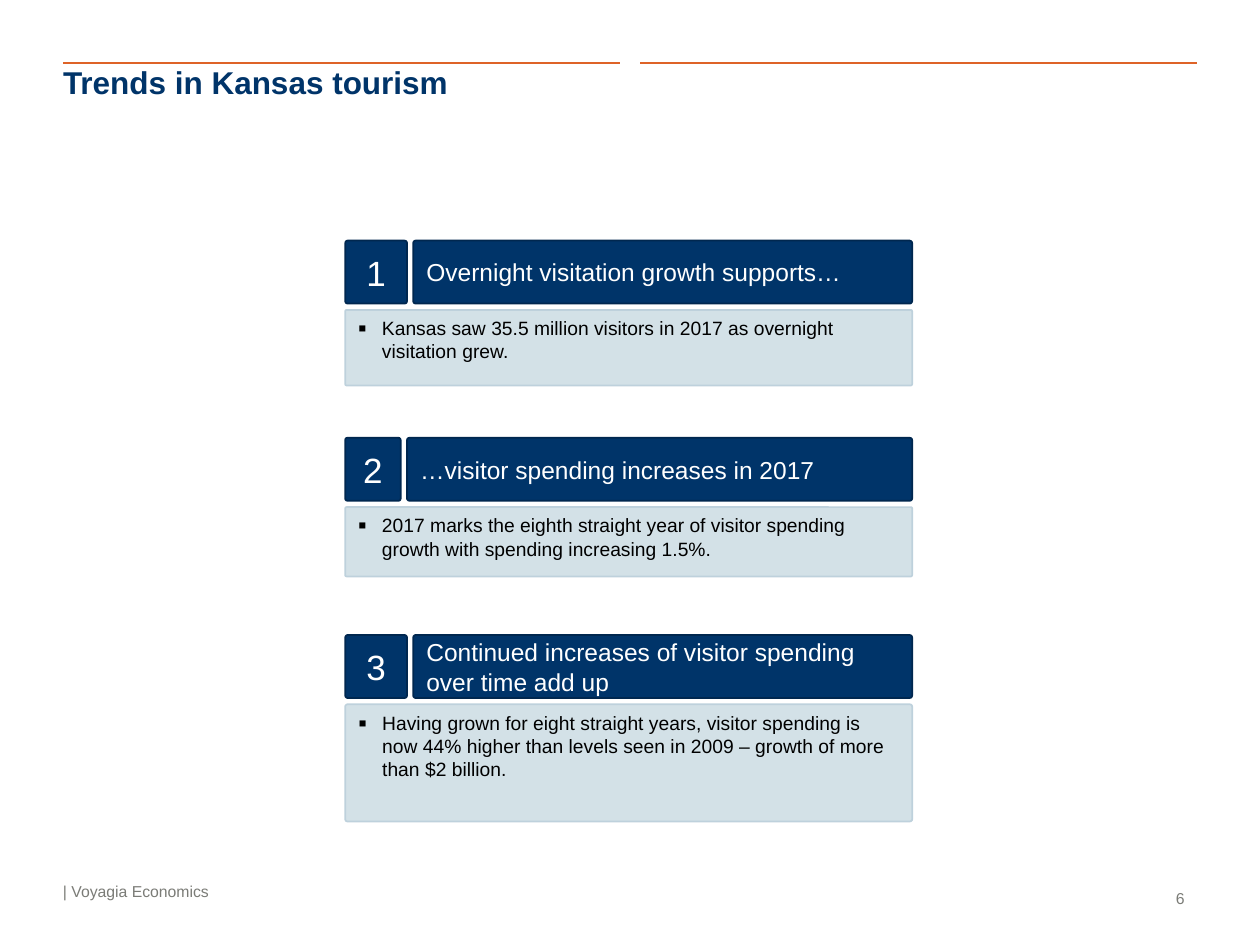
from lxml.etree import SubElement
from pptx import Presentation
from pptx.dml.color import RGBColor
from pptx.enum.shapes import MSO_CONNECTOR, MSO_SHAPE
from pptx.enum.text import MSO_ANCHOR as Anchor, PP_ALIGN as Align
from pptx.oxml.ns import qn
from pptx.util import Inches, Pt

COLORS = {
    "navy": "003469", "navy_edge": "00274F", "panel": "D3E1E7",
    "panel_edge": "BED1DC", "orange": "DE6328", "gray": "7B7C77",
    "white": "FFFFFF", "black": "000000",
}
COLORS = {name: RGBColor.from_string(code) for name, code in COLORS.items()}

deck = Presentation()
deck.slide_width, deck.slide_height = Inches(10), Inches(7.5)
page = deck.slides.add_slide(deck.slide_layouts[6])


def write(shape, text, size, color, align=Align.LEFT, anchor=Anchor.TOP, bold=False):
    frame = shape.text_frame
    frame.word_wrap = True
    frame.vertical_anchor = anchor
    frame.text = text
    para = frame.paragraphs[0]
    para.alignment = align
    font = para.runs[0].font
    font.name, font.size, font.bold = "Arial", Pt(size), bold
    font.color.rgb = COLORS[color]
    return para


def add_block(left, top, width, height, fill, corner):
    block = page.shapes.add_shape(MSO_SHAPE.ROUNDED_RECTANGLE, Inches(left),
                                  Inches(top), Inches(width), Inches(height))
    block.adjustments[0] = corner
    block.shadow.inherit = False
    block.fill.solid()
    block.fill.fore_color.rgb = COLORS[fill]
    block.line.color.rgb = COLORS[fill + "_edge"]
    block.line.width = Pt(1)
    return block


MARGIN, COLUMN, GUTTER = 0.5, 4.42, 0.16
for column in range(2):
    left = MARGIN + column * (COLUMN + GUTTER)
    rule = page.shapes.add_connector(MSO_CONNECTOR.STRAIGHT, Inches(left), Inches(MARGIN),
                                     Inches(left + COLUMN), Inches(MARGIN))
    rule.line.color.rgb = COLORS["orange"]
    rule.line.width = Pt(1.25)
    SubElement(rule._element.spPr, qn("a:effectLst"))

title = page.shapes.add_textbox(Inches(MARGIN), Inches(MARGIN), Inches(COLUMN), Inches(1.05))
title.text_frame.margin_left = title.text_frame.margin_top = 0
write(title, "Trends in Kansas tourism", 18, "navy", bold=True)

FOOTER_TOP, FOOTER_WIDTH, FOOTER_HEIGHT = 7, 2.17, 0.25
footer = page.shapes.add_textbox(Inches(MARGIN), Inches(FOOTER_TOP),
                                 Inches(FOOTER_WIDTH), Inches(FOOTER_HEIGHT))
footer.text_frame.margin_left = 0
footer.text_frame.margin_top = footer.text_frame.margin_bottom = 0
write(footer, "| Voyagia Economics", 9, "gray")

number = page.shapes.add_textbox(Inches(10 - MARGIN - FOOTER_WIDTH), Inches(FOOTER_TOP),
                                 Inches(FOOTER_WIDTH), Inches(FOOTER_HEIGHT))
write(number, "6", 9, "gray", Align.RIGHT, Anchor.MIDDLE)

LEFT, WIDTH, FIRST_ROW, ROW_STEP = 2.74, 4.5, 1.91, 1.565
HEADER, GAP = 0.5, 0.05
trends = [
    ("Overnight visitation growth supports…", 0.49, 0.6,
     "Kansas saw 35.5 million visitors in 2017 as overnight visitation grew."),
    ("…visitor spending increases in 2017", 0.44, 0.55,
     "2017 marks the eighth straight year of visitor spending growth "
     "with spending increasing 1.5%."),
    ("Continued increases of visitor spending over time add up", 0.49, 0.93,
     "Having grown for eight straight years, visitor spending is now 44% higher "
     "than levels seen in 2009 – growth of more than $2 billion."),
]
for row, (heading, badge_width, panel_height, detail) in enumerate(trends):
    top = FIRST_ROW + row * ROW_STEP
    panel = add_block(LEFT, top + HEADER + GAP, WIDTH, panel_height, "panel", 0.02)
    para = write(panel, detail, 11, "black")
    props = para._p.get_or_add_pPr()
    props.set("marL", str(Inches(0.19)))
    props.set("indent", str(-Inches(0.19)))
    SubElement(props, qn("a:buSzPct"), val="126000")
    SubElement(props, qn("a:buFont"), typeface="Arial")
    SubElement(props, qn("a:buChar"), char="▪")

    offset = badge_width + GAP
    header = add_block(LEFT + offset, top, WIDTH - offset, HEADER, "navy", 0.04)
    write(header, heading, 14, "white", anchor=Anchor.MIDDLE)
    badge = add_block(LEFT, top, badge_width, HEADER, "navy", 0.04)
    write(badge, str(row + 1), 20, "white", Align.CENTER, Anchor.MIDDLE)

deck.save("out.pptx")
